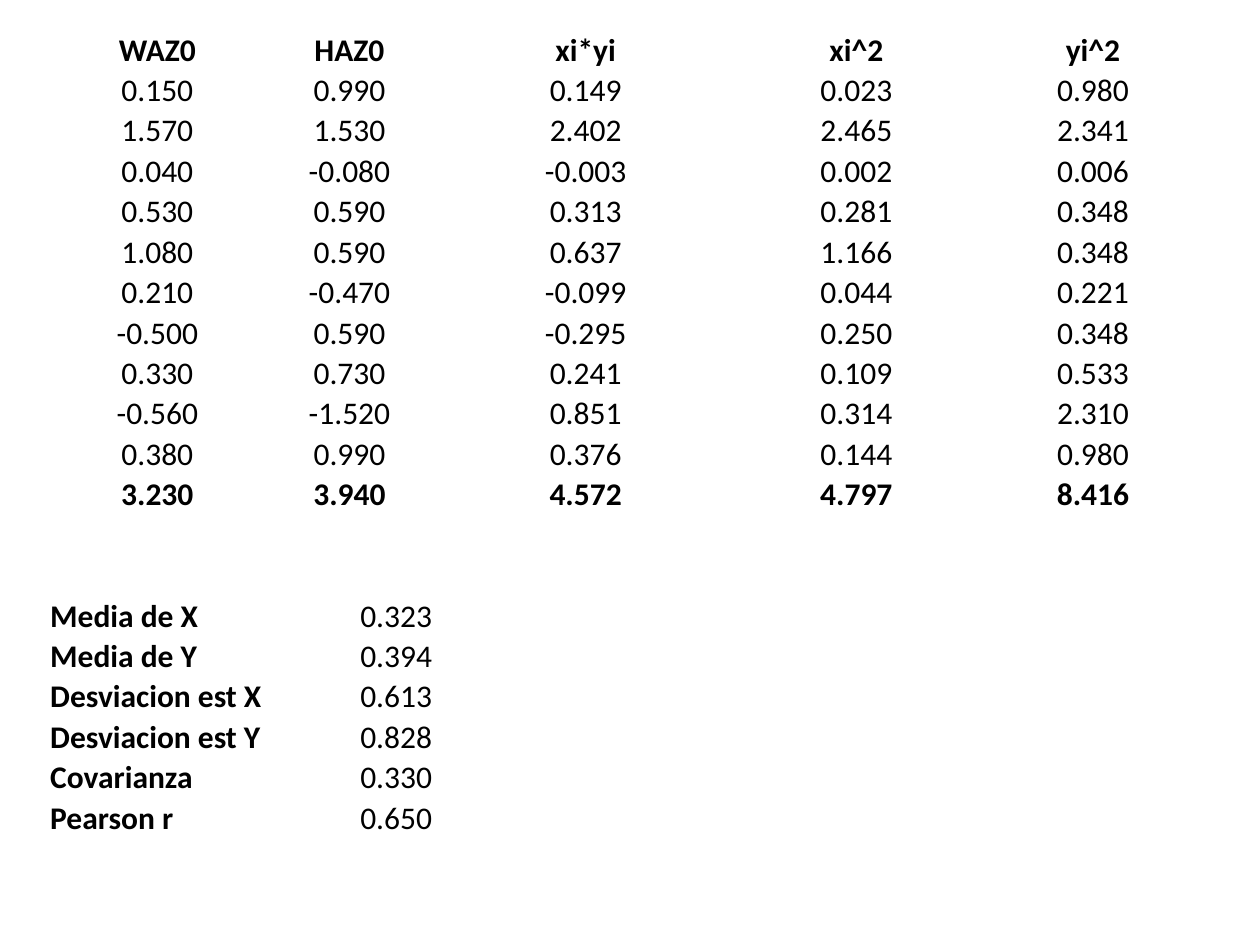
from dataclasses import dataclass

from pptx import Presentation
from pptx.dml.color import RGBColor
from pptx.enum.text import MSO_ANCHOR, PP_ALIGN
from pptx.util import Pt

LEFT, CENTER, RIGHT = PP_ALIGN.LEFT, PP_ALIGN.CENTER, PP_ALIGN.RIGHT
BOTTOM = MSO_ANCHOR.BOTTOM


@dataclass(frozen=True)
class Theme:
    """Fonts, sizes and colours of the slide."""

    font: str = "Calibri"
    size: float = 18
    text: RGBColor = RGBColor(0, 0, 0)


THEME = Theme()
COLUMN_WIDTHS = (123.8, 95.8, 174.2, 135.2, 135.2)
ROW_HEIGHT = 23.11
BLANK_ROWS = 2
CELL_FORMAT = {
    "vertical_anchor": BOTTOM,
    "margin_left": Pt(0.7),
    "margin_right": Pt(0.7),
    "margin_top": Pt(0.7),
    "margin_bottom": Pt(0),
}
FONT_FORMAT = {"name": THEME.font, "size": Pt(THEME.size)}
TABLE_FORMAT = {"first_row": False, "horz_banding": False}

PRODUCTS = (
    ("WAZ0", "HAZ0", "xi*yi", "xi^2", "yi^2"),
    ("0.150", "0.990", "0.149", "0.023", "0.980"),
    ("1.570", "1.530", "2.402", "2.465", "2.341"),
    ("0.040", "-0.080", "-0.003", "0.002", "0.006"),
    ("0.530", "0.590", "0.313", "0.281", "0.348"),
    ("1.080", "0.590", "0.637", "1.166", "0.348"),
    ("0.210", "-0.470", "-0.099", "0.044", "0.221"),
    ("-0.500", "0.590", "-0.295", "0.250", "0.348"),
    ("0.330", "0.730", "0.241", "0.109", "0.533"),
    ("-0.560", "-1.520", "0.851", "0.314", "2.310"),
    ("0.380", "0.990", "0.376", "0.144", "0.980"),
    ("3.230", "3.940", "4.572", "4.797", "8.416"),
)
STATISTICS = (
    ("Media de X", "0.323"),
    ("Media de Y", "0.394"),
    ("Desviacion est X", "0.613"),
    ("Desviacion est Y", "0.828"),
    ("Covarianza", "0.330"),
    ("Pearson r", "0.650"),
)


def apply_format(target, values):
    """Set each attribute named in a dict of format values."""
    for name, value in values.items():
        setattr(target, name, value)


def write_cell(cell, text, alignment, bold):
    """Write one line of text into a table cell."""
    paragraph = cell.text_frame.paragraphs[0]
    paragraph.alignment = alignment
    run = paragraph.add_run()
    run.text = text
    apply_format(run.font, {**FONT_FORMAT, "bold": bold})
    run.font.color.rgb = THEME.text


def add_plain_table(slide, row_count):
    """Add an unfilled table with equal rows."""
    shape = slide.shapes.add_table(
        row_count, len(COLUMN_WIDTHS), Pt(28), Pt(16.6),
        Pt(sum(COLUMN_WIDTHS)), Pt(row_count * ROW_HEIGHT),
    )
    table = shape.table
    apply_format(table, TABLE_FORMAT)
    for column, width in zip(table.columns, COLUMN_WIDTHS):
        column.width = Pt(width)
    for row in table.rows:
        row.height = Pt(ROW_HEIGHT)
    for cell in table.iter_cells():
        cell.fill.background()
        apply_format(cell, CELL_FORMAT)
    return table


def write_products(table):
    """Write the data columns with a bold heading and total row."""
    bold_rows = (0, len(PRODUCTS) - 1)
    for row, values in enumerate(PRODUCTS):
        for column, text in enumerate(values):
            write_cell(table.cell(row, column), text, CENTER, row in bold_rows)


def write_statistics(table, first_row):
    """Write the bold labels and their results."""
    for row, (label, value) in enumerate(STATISTICS, first_row):
        write_cell(table.cell(row, 0), label, LEFT, True)
        write_cell(table.cell(row, 1), value, RIGHT, False)


def main():
    """Build the slide and save it."""
    presentation = Presentation()
    apply_format(presentation, {"slide_width": Pt(720), "slide_height": Pt(540)})
    slide = presentation.slides.add_slide(presentation.slide_layouts[6])
    first_statistic = len(PRODUCTS) + BLANK_ROWS
    table = add_plain_table(slide, first_statistic + len(STATISTICS))
    write_products(table)
    write_statistics(table, first_statistic)
    presentation.save("out.pptx")


if __name__ == "__main__":
    main()
